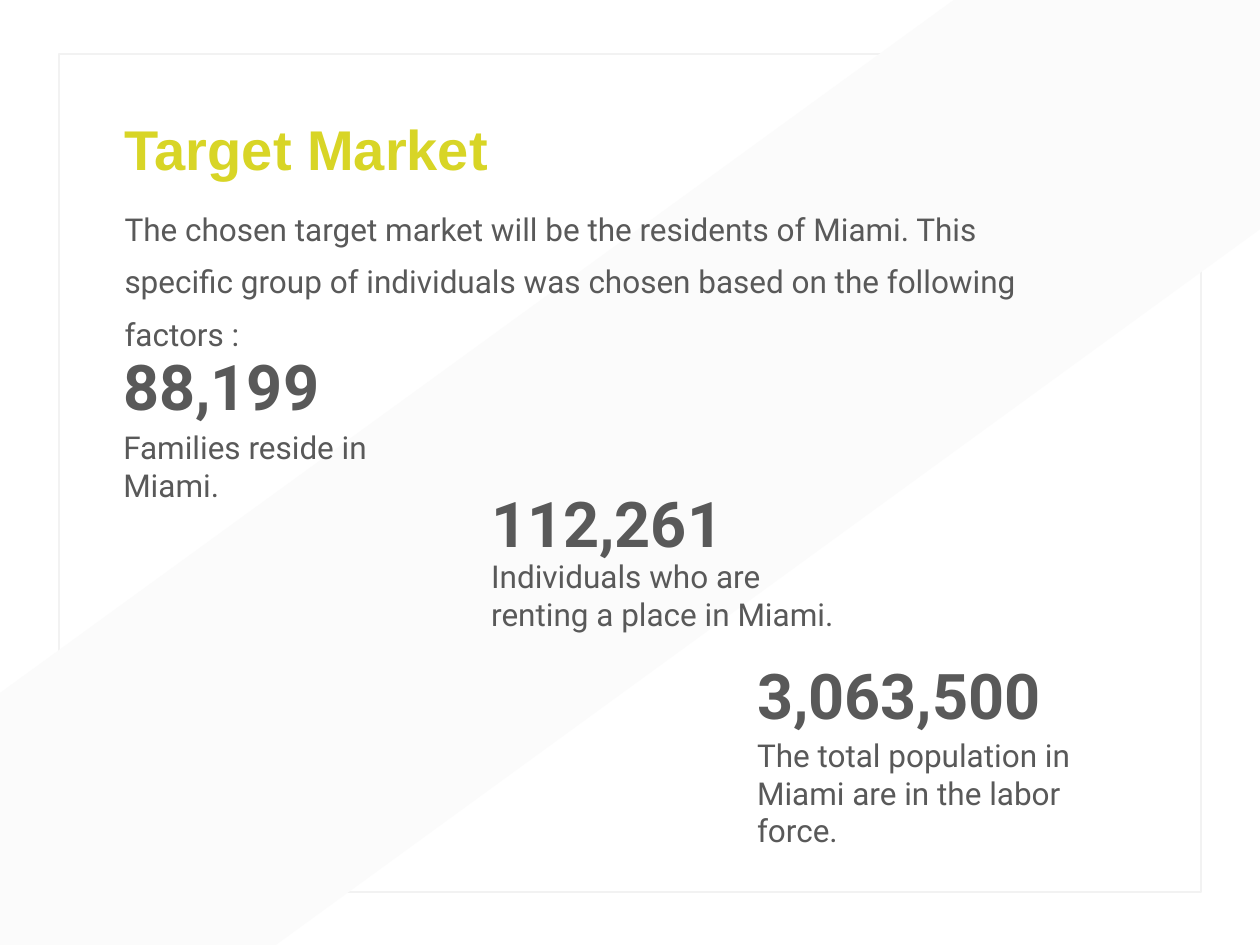
from pptx import Presentation
from pptx.dml.color import RGBColor
from pptx.enum.shapes import MSO_SHAPE
from pptx.enum.text import MSO_ANCHOR, MSO_AUTO_SIZE, PP_ALIGN
from pptx.util import Inches, Pt

RECTANGLE = MSO_SHAPE.RECTANGLE
TOP = MSO_ANCHOR.TOP
NO_AUTOFIT = MSO_AUTO_SIZE.NONE
LEFT = PP_ALIGN.LEFT

TITLE_ONLY_LAYOUT = 5
COLORS = {
    "frame": "F2F2F2",
    "band": "FBFBFB",
    "title": "D8D526",
    "text": "595959",
}
BAND_CORNERS = [(7.57, 0), (10, 0), (10, 1.82), (2.19, 7.5), (0, 7.5), (0, 5.5)]
INTRO = (
    "The chosen target market will be the residents of Miami. This specific "
    "group of individuals was chosen based on the following factors :"
)
# figure, its box, caption, its box
FACTORS = [
    ("88,199", (0.88, 2.71, 1.78, 0.71),
     "Families reside in Miami.", (0.88, 3.35, 2.92, 0.4)),
    ("112,261", (3.8, 3.8, 2.35, 0.57),
     "Individuals who are renting a place in Miami.", (3.8, 4.37, 3.16, 0.71)),
    ("3,063,500", (5.91, 5.16, 2.82, 0.71),
     "The total population in Miami are in the labor force.",
     (5.91, 5.79, 3.29, 0.71)),
]


def rgb(name):
    return RGBColor.from_string(COLORS[name])


def add_frame(slide):
    frame = slide.shapes.add_shape(
        RECTANGLE, Inches(0.47), Inches(0.43), Inches(9.06), Inches(6.65))
    frame.shadow.inherit = False
    frame.fill.background()
    frame.line.color.rgb = rgb("frame")
    frame.line.width = Pt(1)


def add_band(slide):
    """Draw the pale diagonal band that crosses the slide."""
    start, *others = [(Inches(x), Inches(y)) for x, y in BAND_CORNERS]
    builder = slide.shapes.build_freeform(*start)
    builder.add_line_segments(others, close=True)
    band = builder.convert_to_shape()
    band.shadow.inherit = False
    band.fill.solid()
    band.fill.fore_color.rgb = rgb("band")
    band.line.fill.background()


def write_text(holder, text, *, size=18, font="Roboto", color="text",
               bold=False, line_spacing=1.0):
    frame = holder.text_frame
    frame.word_wrap = True
    frame.auto_size = NO_AUTOFIT
    frame.vertical_anchor = TOP
    paragraph = frame.paragraphs[0]
    paragraph.alignment = LEFT
    paragraph.line_spacing = line_spacing
    run = paragraph.add_run()
    run.text = text
    run.font.size = Pt(size)
    run.font.name = font
    run.font.bold = bold
    run.font.color.rgb = rgb(color)


def add_text(slide, text, box, **text_format):
    holder = slide.shapes.add_textbox(*map(Inches, box))
    write_text(holder, text, **text_format)


def add_title(slide, text):
    title = slide.shapes.title
    title.left, title.top = Inches(0.89), Inches(0.86)
    title.width, title.height = Inches(3.37), Inches(0.64)
    write_text(title, text, size=32, font="Arial", color="title", bold=True)


def main():
    presentation = Presentation()
    presentation.slide_width = Inches(10)
    presentation.slide_height = Inches(7.5)
    slide = presentation.slides.add_slide(
        presentation.slide_layouts[TITLE_ONLY_LAYOUT])

    add_frame(slide)
    add_band(slide)
    add_title(slide, "Target Market")
    add_text(slide, INTRO, (0.89, 1.5, 7.84, 0.8), line_spacing=1.39)
    for figure, figure_box, caption, caption_box in FACTORS:
        add_text(slide, figure, figure_box, size=36, bold=True)
        add_text(slide, caption, caption_box)

    presentation.save("out.pptx")


if __name__ == "__main__":
    main()
